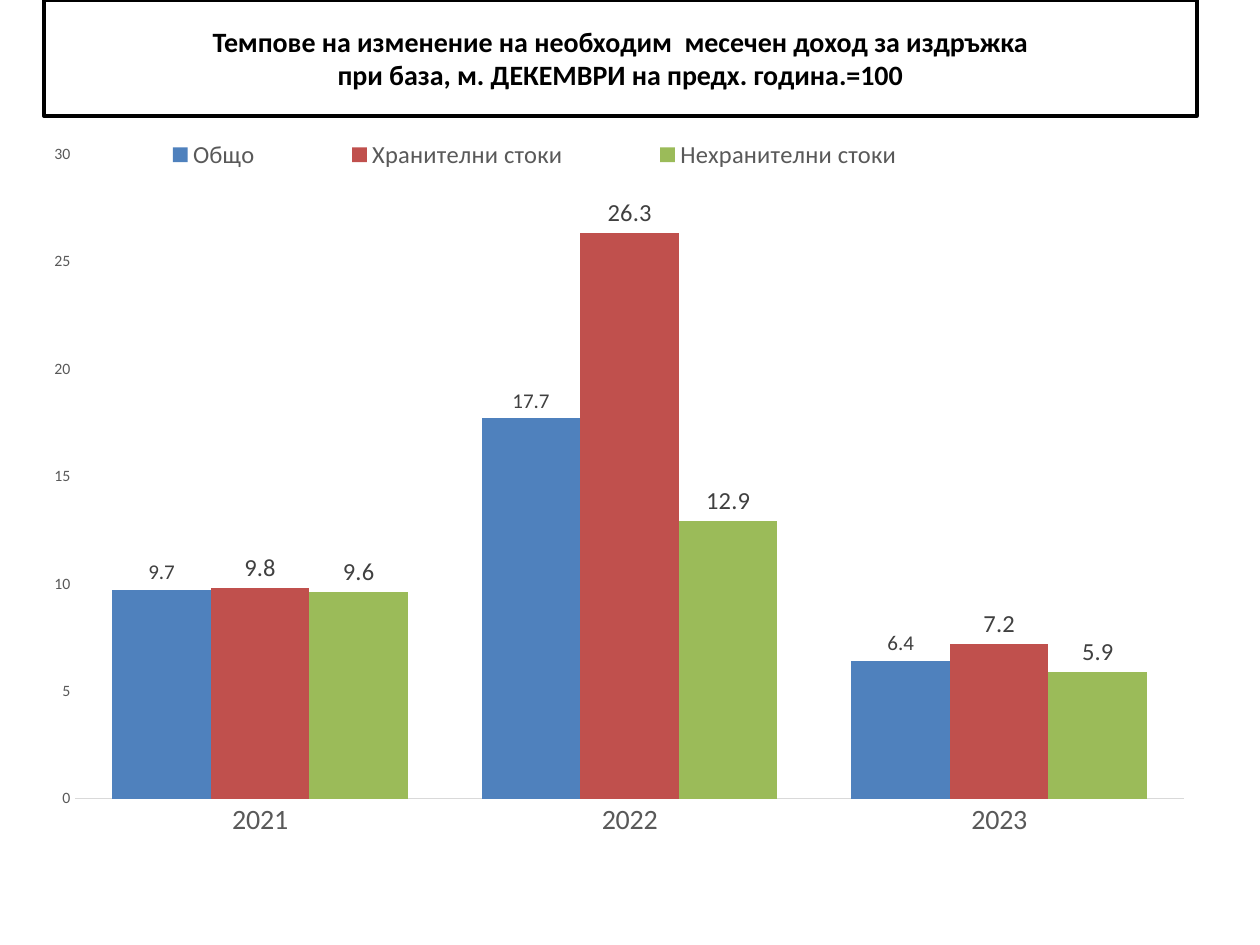
from dataclasses import dataclass

from pptx import Presentation
from pptx.chart.data import CategoryChartData
from pptx.dml.color import RGBColor
from pptx.enum.chart import (XL_CHART_TYPE, XL_LABEL_POSITION,
                             XL_LEGEND_POSITION, XL_TICK_MARK)
from pptx.enum.text import MSO_ANCHOR, PP_ALIGN
from pptx.oxml import parse_xml
from pptx.oxml.ns import nsdecls
from pptx.util import Pt

COLUMNS = XL_CHART_TYPE.COLUMN_CLUSTERED
OUTSIDE = XL_LABEL_POSITION.OUTSIDE_END
BOTTOM = XL_LEGEND_POSITION.BOTTOM
NO_TICK = XL_TICK_MARK.NONE
MIDDLE = MSO_ANCHOR.MIDDLE
CENTER = PP_ALIGN.CENTER

EMU_PER_PX = 914400 / 126
TITLE_ONLY = 5


@dataclass(frozen=True)
class Theme:
    font: str = "Calibri"
    white: str = "FFFFFF"
    black: str = "000000"
    axis_text: str = "595959"
    label_text: str = "404040"
    axis_line: str = "D9D9D9"
    title_size: int = 16
    category_size: int = 16
    legend_size: int = 14
    chart_size: int = 10
    value_size: int = 9


THEME = Theme()

TITLE = ("Темпове на изменение на необходим  месечен доход за издръжка\v"
         "при база, м. ДЕКЕМВРИ на предх. година.=100")
YEARS = ["2021", "2022", "2023"]
# Name, values, colour, label size
SERIES = [
    ("Общо", (9.7, 17.7, 6.4), "4F81BD", 12),
    ("Хранителни стоки", (9.8, 26.3, 7.2), "C0504D", 14),
    ("Нехранителни стоки", (9.6, 12.9, 5.9), "9BBB59", 14),
]


def px(n):
    return round(n * EMU_PER_PX)


def rgb(color):
    return RGBColor.from_string(color)


def set_attrs(target, values):
    for name, value in values.items():
        setattr(target, name, value)


def style_font(font, size, color, bold=False):
    set_attrs(font, {"name": THEME.font, "size": Pt(size), "bold": bold})
    font.color.rgb = rgb(color)


def place_in_chart(element, x, y, w, h, inner=False):
    """Set a manual layout, in fractions of the chart, on a chart part."""
    target = '<c:layoutTarget val="inner"/>' if inner else ""
    sizes = "".join(f'<c:{tag} val="{value}"/>'
                    for tag, value in zip("xywh", (x, y, w, h)))
    layout = parse_xml(
        f'<c:layout {nsdecls("c")}><c:manualLayout>{target}'
        f'<c:xMode val="edge"/><c:yMode val="edge"/>{sizes}'
        '</c:manualLayout></c:layout>')
    for old in element.findall(layout.tag):
        element.remove(old)
    # In a plot area the layout is first; in a legend it follows the position
    element.insert(0 if inner else 1, layout)


def add_title(s, text, x, y, w, h):
    sp = s.shapes.title
    set_attrs(sp, {"left": px(x), "top": px(y),
                   "width": px(w), "height": px(h)})
    sp.fill.solid()
    sp.fill.fore_color.rgb = rgb(THEME.white)
    sp.line.color.rgb = rgb(THEME.black)
    sp.line.width = Pt(2)
    tf = sp.text_frame
    set_attrs(tf, {"vertical_anchor": MIDDLE, "word_wrap": True})
    p = tf.paragraphs[0]
    p.text = text
    p.alignment = CENTER
    for r in p.runs:
        style_font(r.font, THEME.title_size, THEME.black, bold=True)


def style_axes(chart):
    years, values = chart.category_axis, chart.value_axis
    for axis, size in ((years, THEME.category_size),
                       (values, THEME.value_size)):
        set_attrs(axis, {"major_tick_mark": NO_TICK,
                         "minor_tick_mark": NO_TICK,
                         "has_major_gridlines": False})
        style_font(axis.tick_labels.font, size, THEME.axis_text)
    years.format.line.color.rgb = rgb(THEME.axis_line)
    years.format.line.width = Pt(0.75)
    values.format.line.fill.background()
    set_attrs(values, {"minimum_scale": 0, "maximum_scale": 30,
                       "major_unit": 5})


def style_series(series, color, label_size):
    series.format.fill.solid()
    series.format.fill.fore_color.rgb = rgb(color)
    series.invert_if_negative = False
    labels = series.data_labels
    set_attrs(labels, {"show_value": True, "position": OUTSIDE})
    style_font(labels.font, label_size, THEME.label_text)


def add_column_chart(s, x, y, w, h):
    data = CategoryChartData(number_format="0.0")
    data.categories = YEARS
    for name, values, _, _ in SERIES:
        data.add_series(name, values)
    chart = s.shapes.add_chart(COLUMNS, px(x), px(y), px(w), px(h),
                               data).chart
    set_attrs(chart, {"has_title": False, "has_legend": True})
    style_font(chart.font, THEME.chart_size, THEME.black)

    # Axes and columns
    style_axes(chart)
    chart.value_axis.tick_labels.number_format = "0"
    chart.value_axis.tick_labels.number_format_is_linked = False
    plot = chart.plots[0]
    set_attrs(plot, {"gap_width": 75, "overlap": 0, "vary_by_categories": False})
    for series, (_, _, color, label_size) in zip(plot.series, SERIES):
        style_series(series, color, label_size)

    # Legend, moved to the top of the chart
    legend = chart.legend
    set_attrs(legend, {"position": BOTTOM, "include_in_layout": False})
    style_font(legend.font, THEME.legend_size, THEME.axis_text)
    place_in_chart(legend._element, 0.05, 0, 0.77, 0.05)
    place_in_chart(chart._chartSpace.chart.plotArea,
                   0.043, 0.024, 0.946, 0.812, inner=True)


def main():
    prs = Presentation()
    set_attrs(prs, {"slide_width": px(1260), "slide_height": px(945)})
    s = prs.slides.add_slide(prs.slide_layouts[TITLE_ONLY])
    add_title(s, TITLE, 44, 0, 1153, 116)
    add_column_chart(s, 25, 135, 1172, 794)
    prs.save("out.pptx")


if __name__ == "__main__":
    main()
